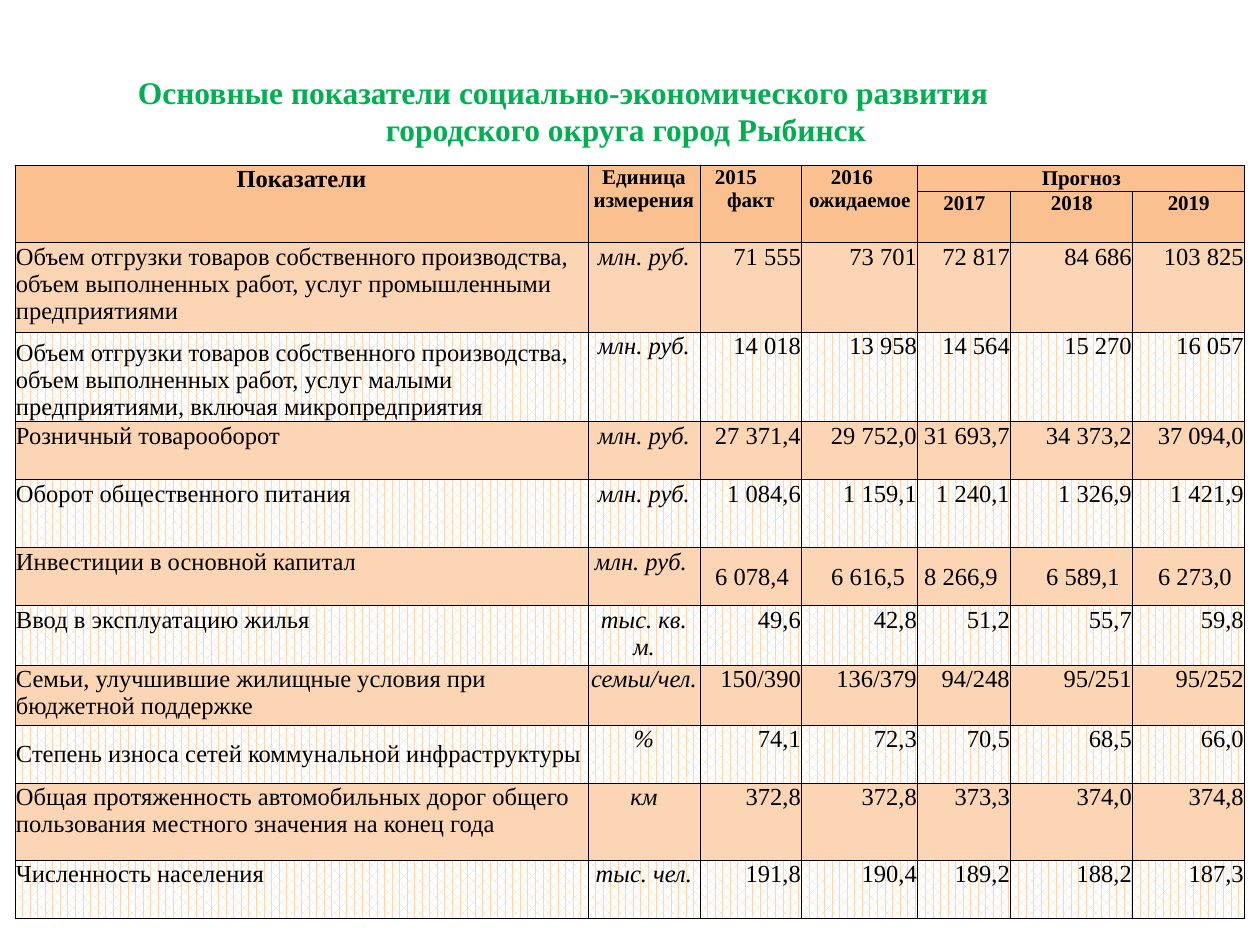
from lxml.etree import SubElement
from pptx import Presentation
from pptx.dml.color import RGBColor
from pptx.enum.dml import MSO_PATTERN
from pptx.enum.text import MSO_ANCHOR, PP_ALIGN
from pptx.oxml.ns import qn
from pptx.util import Pt

SCALE = 914400 / 126
FONT = "Times New Roman"
COLORS = {"title": "00B050", "text": "000000", "header": "FAC090", "row": "FCD5B5", "paper": "FFFFFF"}

TITLE = [
    ("Основные показатели социально-экономического развития", 138),
    ("городского округа город Рыбинск", 386),
]
TITLE_BOX = (0, 66, 1260, 89)
TABLE_LEFT, TABLE_TOP = 15, 165
COLUMN_WIDTHS = [573, 112, 102, 116, 93, 122, 112]
ROW_HEIGHTS = [26, 47, 87, 87, 58, 68, 58, 58, 58, 58, 77, 58]

HEADERS = [
    (0, 0, ["Показатели"], 14),
    (0, 1, ["Единица измерения"], 12),
    (0, 2, ["2015", "факт"], 12),
    (0, 3, ["2016", "ожидаемое"], 12),
    (0, 4, ["Прогноз"], 12),
    (1, 4, ["2017"], 12),
    (1, 5, ["2018"], 12),
    (1, 6, ["2019"], 12),
]
YEAR_INDENTS = {2: 14, 3: 28}
MERGES = [((0, column), (1, column)) for column in range(4)] + [((0, 4), (0, 6))]

INDICATORS = [
    ("Объем отгрузки товаров собственного производства, объем выполненных работ, услуг промышленными предприятиями",
     "млн. руб.", "71 555", "73 701", "72 817", "84 686", "103 825"),
    ("Объем отгрузки товаров собственного производства, объем выполненных работ, услуг малыми предприятиями, "
     "включая микропредприятия",
     "млн. руб.", "14 018", "13 958", "14 564", "15 270", "16 057"),
    ("Розничный товарооборот", "млн. руб.", "27 371,4", "29 752,0", "31 693,7", "34 373,2", "37 094,0"),
    ("Оборот общественного питания", "млн. руб.", "1 084,6", "1 159,1", "1 240,1", "1 326,9", "1 421,9"),
    ("Инвестиции в основной капитал", "млн. руб. ", "6 078,4", "6 616,5", "8 266,9", "6 589,1", "6 273,0"),
    ("Ввод в эксплуатацию жилья", "тыс. кв. м.", "49,6", "42,8", "51,2", "55,7", "59,8"),
    ("Семьи, улучшившие жилищные условия при бюджетной поддержке",
     "семьи/чел.", "150/390", "136/379", "94/248", "95/251", "95/252"),
    ("Степень износа сетей коммунальной инфраструктуры", "%", "74,1", "72,3", "70,5", "68,5", "66,0"),
    ("Общая протяженность автомобильных дорог общего пользования местного значения на конец года",
     "км", "372,8", "372,8", "373,3", "374,0", "374,8"),
    ("Численность населения", "тыс. чел.", "191,8", "190,4", "189,2", "188,2", "187,3"),
]
INVESTMENT = 4
NAME_ANCHORS = {1: MSO_ANCHOR.BOTTOM, 7: MSO_ANCHOR.MIDDLE}
CELL_MARGINS = {"margin_left": 1, "margin_right": 1, "margin_top": 1, "margin_bottom": 0}


def px(value):
    return round(value * SCALE)


def color(name):
    return RGBColor.from_string(COLORS[name])


def set_format(target, values):
    for name, value in values.items():
        setattr(target, name, value)


def write(paragraph, text, alignment, size, color_name="text", indent=0, **styles):
    if indent:
        paragraph._p.get_or_add_pPr().set("marL", str(px(indent)))
    paragraph.alignment = alignment
    run = paragraph.add_run()
    run.text = text
    set_format(run.font, {"name": FONT, "size": Pt(size), "bold": False, "italic": False, **styles})
    run.font.color.rgb = color(color_name)


def add_borders(cell):
    properties = cell._tc.get_or_add_tcPr()
    for side in ("lnL", "lnR", "lnT", "lnB"):
        line = SubElement(properties, qn(f"a:{side}"), w=str(Pt(0.5)))
        fill = SubElement(line, qn("a:solidFill"))
        SubElement(fill, qn("a:srgbClr"), val=COLORS["text"])


def fill_cell(cell, row):
    if row >= 2 and row % 2:
        cell.fill.patterned()
        cell.fill.pattern = MSO_PATTERN.PERCENT_60
        cell.fill.fore_color.rgb = color("row")
        cell.fill.back_color.rgb = color("paper")
    else:
        cell.fill.solid()
        cell.fill.fore_color.rgb = color("header" if row < 2 else "row")


def add_title(slide):
    frame = slide.shapes.add_textbox(*map(px, TITLE_BOX)).text_frame
    set_format(frame, {"word_wrap": True, "vertical_anchor": MSO_ANCHOR.MIDDLE,
                       **dict.fromkeys(CELL_MARGINS, 0)})
    for index, (text, indent) in enumerate(TITLE):
        paragraph = frame.add_paragraph() if index else frame.paragraphs[0]
        write(paragraph, text, PP_ALIGN.LEFT, 18, "title", indent, bold=True)


def add_headers(table):
    for row, column, lines, size in HEADERS:
        frame = table.cell(row, column).text_frame
        for index, text in enumerate(lines):
            paragraph = frame.add_paragraph() if index else frame.paragraphs[0]
            indent = 0 if index or row else YEAR_INDENTS.get(column, 0)
            alignment = PP_ALIGN.LEFT if indent else PP_ALIGN.CENTER
            write(paragraph, text, alignment, size, indent=indent, bold=True)
    table.cell(0, 4).vertical_anchor = MSO_ANCHOR.MIDDLE
    for first, last in MERGES:
        table.cell(*first).merge(table.cell(*last))


def add_indicators(table):
    alignments = [PP_ALIGN.LEFT, PP_ALIGN.CENTER] + [PP_ALIGN.RIGHT] * 5
    for index, values in enumerate(INDICATORS):
        for column, text in enumerate(values):
            cell = table.cell(index + 2, column)
            write(cell.text_frame.paragraphs[0], text, alignments[column], 14, italic=column == 1)
            if index == INVESTMENT and column >= 2:
                set_format(cell, {"vertical_anchor": MSO_ANCHOR.MIDDLE, "margin_right": px(13)})
        if index in NAME_ANCHORS:
            table.cell(index + 2, 0).vertical_anchor = NAME_ANCHORS[index]


def add_indicator_table(slide):
    table = slide.shapes.add_table(
        len(ROW_HEIGHTS), len(COLUMN_WIDTHS), px(TABLE_LEFT), px(TABLE_TOP),
        px(sum(COLUMN_WIDTHS)), px(sum(ROW_HEIGHTS))).table
    set_format(table, {"first_row": False, "horz_banding": False})
    for column, width in zip(table.columns, COLUMN_WIDTHS):
        column.width = px(width)
    for row_index, (row, height) in enumerate(zip(table.rows, ROW_HEIGHTS)):
        row.height = px(height)
        for cell in row.cells:
            add_borders(cell)
            fill_cell(cell, row_index)
            set_format(cell, {name: px(value) for name, value in CELL_MARGINS.items()})
    add_headers(table)
    add_indicators(table)


def main():
    presentation = Presentation()
    set_format(presentation, {"slide_width": px(1260), "slide_height": px(945)})
    slide = presentation.slides.add_slide(presentation.slide_layouts[6])
    add_title(slide)
    add_indicator_table(slide)
    presentation.save("out.pptx")


if __name__ == "__main__":
    main()
